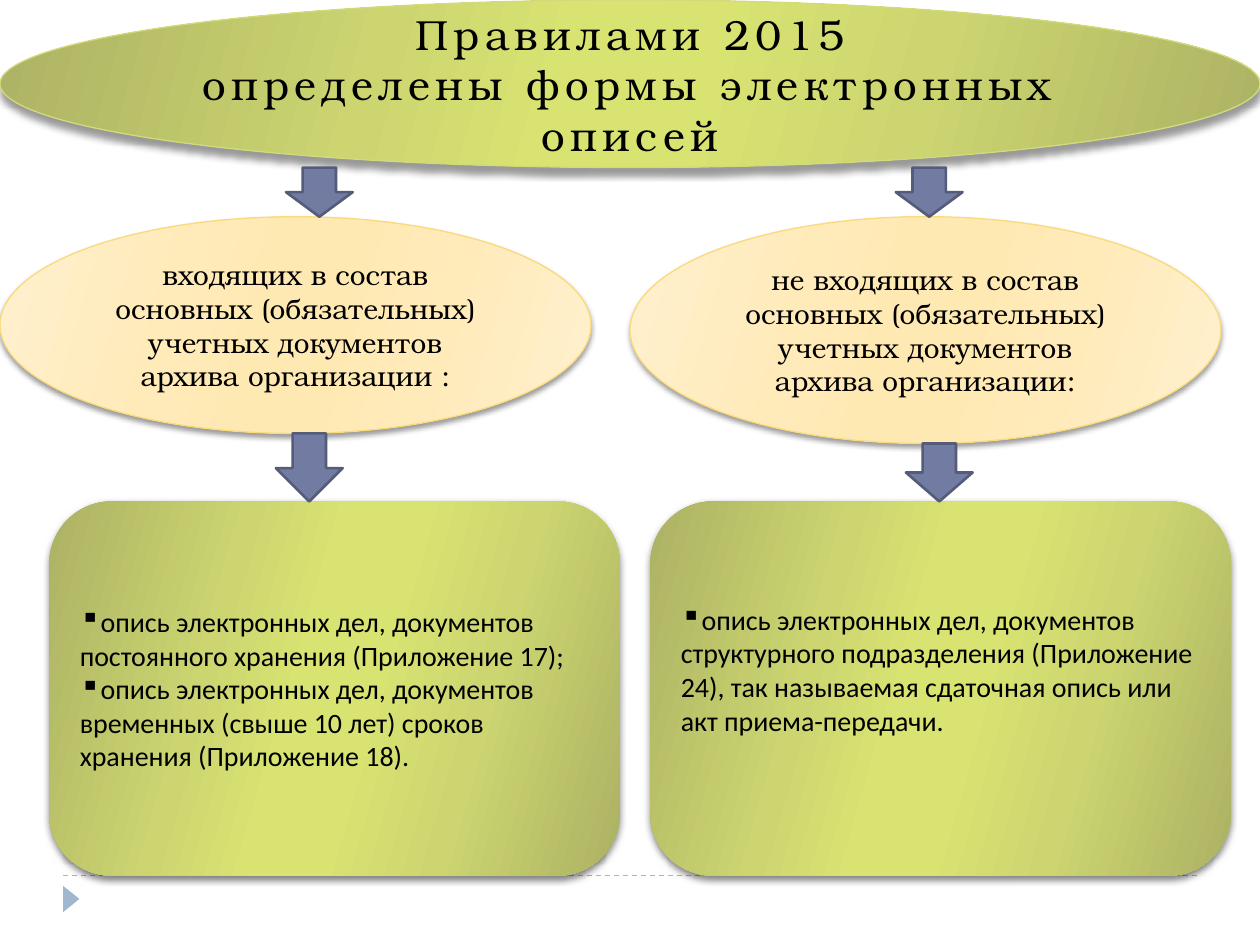
from copy import deepcopy
from dataclasses import dataclass

from lxml.etree import SubElement as Sub
from pptx import Presentation
from pptx.dml.color import RGBColor as Rgb
from pptx.enum.dml import MSO_LINE as Dash
from pptx.enum.shapes import MSO_CONNECTOR as Link, MSO_SHAPE as Kind
from pptx.enum.text import MSO_ANCHOR as Anchor, MSO_AUTO_SIZE as Fit, PP_ALIGN as Align
from pptx.oxml.ns import qn
from pptx.util import Inches, Pt


@dataclass(frozen=True)
class Theme:
    ink: str = "000000"
    pale: str = "9FB8CD"
    arrow: str = "727CA3"
    edge: str = "545C79"
    lime_edge: str = "D2DA7A"
    sand_edge: str = "FADA7A"
    lime: tuple = ("ACB264", "CCD570", "D9E371")
    sand: tuple = ("FFF0CF", "FFEBBA", "FFE9B3")
    stops: tuple = (0, 30, 45, 55, 73, 100)
    tilt: int = 16
    serif: str = "TeX Gyre Bonum"
    sans: str = "Calibri"
    head: int = 24
    body: int = 16


def put(item, **vals):
    for name, val in vals.items():
        setattr(item, name, val)


class Deck:
    """Holds the theme and the current slide."""

    def __init__(self, theme):
        self.theme = theme
        self.file = Presentation()
        put(self.file, slide_width=Inches(10), slide_height=Inches(7.5))
        self.slide = self.file.slides.add_slide(self.file.slide_layouts[5])

    def shape(self, kind, box, fill, edge=None, width=0.75):
        item = self.slide.shapes.add_shape(kind, *map(Inches, box))
        item.shadow.inherit = False
        if isinstance(fill, tuple):
            self.blend(item, fill)
        else:
            item.fill.solid()
            item.fill.fore_color.rgb = Rgb.from_string(fill)
        if edge:
            item.line.color.rgb = Rgb.from_string(edge)
            item.line.width = Pt(width)
        else:
            item.line.fill.background()
        return item

    def blend(self, item, tones):
        """Fill with a gradient that runs to its last tone and back."""
        item.fill.gradient()
        item.fill.gradient_angle = 360 - self.theme.tilt
        stops = item._element.spPr.find(".//" + qn("a:gsLst"))
        for _ in range(len(self.theme.stops) - len(stops)):
            stops.append(deepcopy(stops[0]))
        hues = tones + tones[::-1]
        for stop, spot, hue in zip(item.fill.gradient_stops, self.theme.stops, hues):
            stop.position = spot / 100
            stop.color.rgb = Rgb.from_string(hue)

    def shade(self, item, alpha, blur, dist):
        """Add a shadow that falls straight down."""
        glow = item._element.spPr.find(qn("a:effectLst"))
        drop = Sub(glow, qn("a:outerShdw"), blurRad=str(Pt(blur)), dist=str(Pt(dist)),
                   dir="5400000", rotWithShape="0")
        tone = Sub(drop, qn("a:srgbClr"), val=self.theme.ink)
        Sub(tone, qn("a:alpha"), val=str(alpha * 1000))

    def label(self, item, lines, font, size, align=Align.CENTER, mark=None, gap=0):
        frame = item.text_frame
        put(frame, text="\n".join(lines), word_wrap=True, auto_size=Fit.NONE,
            vertical_anchor=Anchor.MIDDLE)
        for para in frame.paragraphs:
            para.alignment = align
            if mark:
                Sub(para._p.get_or_add_pPr(), qn("a:buChar"), char=mark)
            for run in para.runs:
                put(run.font, name=font, size=Pt(size))
                run.font.color.rgb = Rgb.from_string(self.theme.ink)
                if gap:
                    run._r.get_or_add_rPr().set("spc", str(gap * 100))

    def title(self, box, lines):
        look = self.theme
        oval = self.shape(Kind.OVAL, box, look.lime, look.lime_edge)
        self.shade(oval, 40, 4, 3.4)
        head = self.slide.shapes.title
        left, top, wide, high = box
        inset = 0.15  # share of an oval outside its text area
        put(head, left=Inches(left + wide * inset), top=Inches(top),
            width=Inches(wide * (1 - 2 * inset)), height=Inches(high))
        self.label(head, lines, look.serif, look.head, gap=3)
        put(head.text_frame, margin_left=Inches(0.05), margin_right=Inches(0.05))
        self.slide.shapes._spTree.append(head._element)

    def oval(self, box, text):
        look = self.theme
        item = self.shape(Kind.OVAL, box, look.sand, look.sand_edge)
        self.shade(item, 40, 3, 2)
        self.label(item, [text], look.serif, look.body)

    def panel(self, box, lines, foot):
        look = self.theme
        item = self.shape(Kind.ROUNDED_RECTANGLE, box, look.lime)
        self.shade(item, 50, 4, 2)
        self.label(item, lines, look.sans, look.body, Align.LEFT, "▪")
        item.text_frame.margin_bottom = Inches(foot)

    def arrow(self, left, top, end):
        box = (left, top, 0.53, end - top)
        self.shape(Kind.DOWN_ARROW, box, self.theme.arrow, self.theme.edge, 1.5)

    def footer(self):
        ends = map(Inches, (0.5, 6.95, 9.5, 6.95))
        rule = self.slide.shapes.add_connector(Link.STRAIGHT, *ends)
        put(rule.line, width=Pt(0.75), dash_style=Dash.DASH)
        rule.line.color.rgb = Rgb.from_string(self.theme.pale)
        Sub(rule._element.spPr, qn("a:effectLst"))
        mark = self.shape(Kind.ISOSCELES_TRIANGLE, (0.46, 7.07, 0.21, 0.13), self.theme.pale)
        mark.rotation = 90


def main():
    deck = Deck(Theme())
    deck.footer()
    head, row, base = 1.33, 1.72, 3.98
    deck.title((0, 0, 10, head), ["Правилами 2015", "определены формы электронных описей"])
    # oval left, height, text; panel left, width, foot margin, lines; arrow lefts
    sides = [
        (0, 1.72,
         "входящих в состав основных (обязательных) учетных документов архива организации :",
         0.39, 4.53, 0.05,
         ["опись электронных дел, документов постоянного хранения (Приложение 17);",
          "опись электронных дел, документов временных (свыше 10 лет) сроков хранения "
          "(Приложение 18)."],
         2.27, 2.19),
        (5, 1.8,
         "не входящих в состав основных (обязательных) учетных документов архива организации:",
         5.16, 4.61, 0.35,
         ["опись электронных дел, документов структурного подразделения (Приложение 24), "
          "так называемая сдаточная опись или акт приема-передачи."],
         7.11, 7.19),
    ]
    for left, high, text, edge, wide, foot, lines, first, second in sides:
        deck.oval((left, row, 4.69, high), text)
        deck.panel((edge, base, wide, 2.97), lines, foot)
        deck.arrow(first, head, row)
        deck.arrow(second, row + high, base)
    deck.file.save("out.pptx")


if __name__ == "__main__":
    main()
